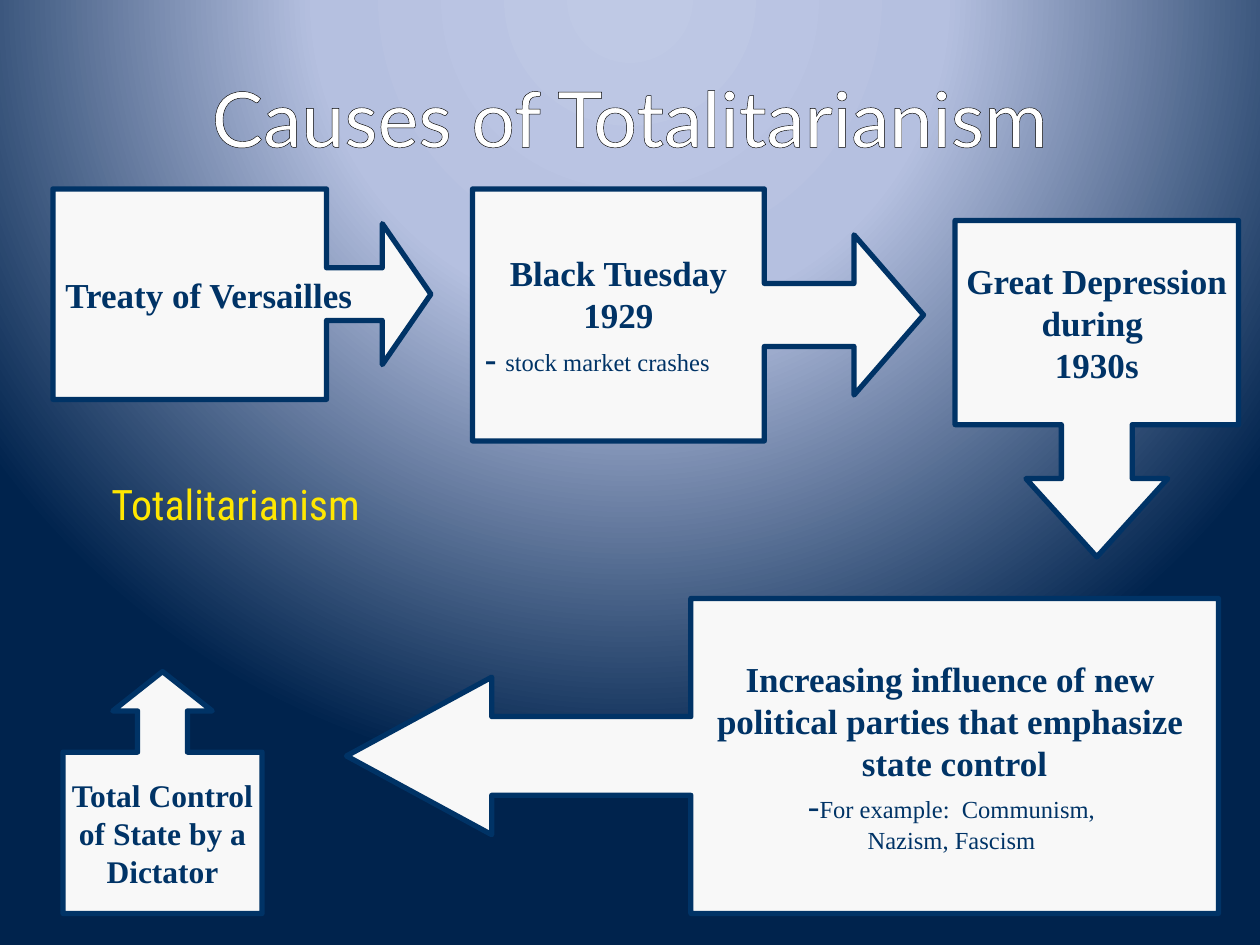
from lxml import etree
from pptx import Presentation
from pptx.dml.color import RGBColor
from pptx.enum.shapes import MSO_SHAPE
from pptx.enum.text import MSO_ANCHOR, PP_ALIGN
from pptx.oxml import parse_xml
from pptx.util import Inches, Pt

LEFT, MID = PP_ALIGN.LEFT, PP_ALIGN.CENTER
RIGHT_BOX = MSO_SHAPE.RIGHT_ARROW_CALLOUT
DOWN_BOX = MSO_SHAPE.DOWN_ARROW_CALLOUT
LEFT_BOX = MSO_SHAPE.LEFT_ARROW_CALLOUT
UP_BOX = MSO_SHAPE.UP_ARROW_CALLOUT
NS = "http://schemas.openxmlformats.org/drawingml/2006/main"
NAVY, PALE = "003366", "F8F8F8"


def tint(code):
    return RGBColor.from_string(code)


def add_run(para, text, size, face, color, bold=False):
    run = para.add_run()
    run.text = text
    font = run.font
    font.size, font.name, font.bold = Pt(size), face, bold
    font.color.rgb = tint(color)
    return run


deck = Presentation()
deck.slide_width, deck.slide_height = Inches(10), Inches(7.5)
slide = deck.slides.add_slide(deck.slide_layouts[5])

fill = slide.background.fill
fill.solid()
fill.fore_color.rgb = tint("00234D")
stops = "".join(
    f'<a:gs pos="{spot * 1000}"><a:srgbClr val="{code}"/></a:gs>'
    for spot, code in [(0, "BFC9E5"), (40, "B5C0E0"), (100, "00234D")]
)
glow = parse_xml(
    f'<a:gradFill xmlns:a="{NS}" rotWithShape="1"><a:gsLst>{stops}</a:gsLst>'
    '<a:path path="circle"><a:fillToRect l="50000" t="-80000" r="50000" b="180000"/>'
    "</a:path></a:gradFill>"
)
back = slide.background._cSld.bg.bgPr
back.replace(back[0], glow)

title = slide.shapes.title
title.left, title.top = Inches(0.5), Inches(0.3)
title.width, title.height = Inches(9), Inches(1.25)
title.text_frame.vertical_anchor = MSO_ANCHOR.MIDDLE
para = title.text_frame.paragraphs[0]
para.alignment = MID
run = add_run(para, "Causes of Totalitarianism", 44, "Lato", "FFFFFF")
edge = etree.fromstring(
    f'<a:ln xmlns:a="{NS}" w="9525"><a:solidFill><a:srgbClr val="000000"/></a:solidFill></a:ln>'
)
run.font._element.insert(0, edge)

steps = [
    (RIGHT_BOX, (0.42, 1.5, 3, 1.67), (0.25, 0.335, 0.231, 0.724), False, [
        (LEFT, [("Treaty of Versailles", 20, True)]),
    ]),
    (RIGHT_BOX, (3.75, 1.5, 3.58, 2), (0.25, 0.318, 0.276, 0.647), True, [
        (MID, [("Black Tuesday", 20, True)]),
        (MID, [("1929", 20, True)]),
        (LEFT, [("- ", 20, True), ("stock market crashes", 14, False)]),
    ]),
    (DOWN_BOX, (7.58, 1.75, 2.25, 2.67), (0.25, 0.25, 0.276, 0.607), False, [
        (MID, [("Great Depression", 20, True)]),
        (MID, [("during ", 20, True)]),
        (MID, [("1930s", 20, True)]),
    ]),
    (LEFT_BOX, (2.75, 4.75, 6.92, 2.5), (0.25, 0.25, 0.461, 0.605), False, [
        (MID, [("Increasing influence of new ", 20, True)]),
        (MID, [("political parties that emphasize ", 20, True)]),
        (MID, [("state control", 20, True)]),
        (MID, [("-", 20, False), ("For example:  Communism, ", 14, False)]),
        (MID, [("Nazism, Fascism ", 14, False)]),
    ]),
    (UP_BOX, (0.5, 5.33, 1.58, 1.92), (0.25, 0.25, 0.198, 0.667), False, [
        (MID, [("Total Control", 18, True)]),
        (MID, [("of State by a", 18, True)]),
        (MID, [("Dictator", 18, True)]),
    ]),
]
for kind, place, bends, wrap, lines in steps:
    box = slide.shapes.add_shape(kind, *map(Inches, place))
    box.shadow.inherit = False
    for spot, bend in enumerate(bends):
        box.adjustments[spot] = bend
    box.fill.solid()
    box.fill.fore_color.rgb = tint(PALE)
    box.line.color.rgb = tint(NAVY)
    box.line.width = Pt(3)
    frame = box.text_frame
    frame.word_wrap = wrap
    frame.vertical_anchor = MSO_ANCHOR.MIDDLE
    for spot, (align, runs) in enumerate(lines):
        para = frame.add_paragraph() if spot else frame.paragraphs[0]
        para.alignment = align
        for text, size, bold in runs:
            add_run(para, text, size, "Times New Roman", NAVY, bold)

label = slide.shapes.add_textbox(Inches(0.33), Inches(3.75), Inches(3.08), Inches(1.17))
label.text_frame.word_wrap = False
para = label.text_frame.paragraphs[0]
para.alignment = MID
add_run(para, "Totalitarianism", 24, "Roboto Condensed", "FFE701")

deck.save("out.pptx")
